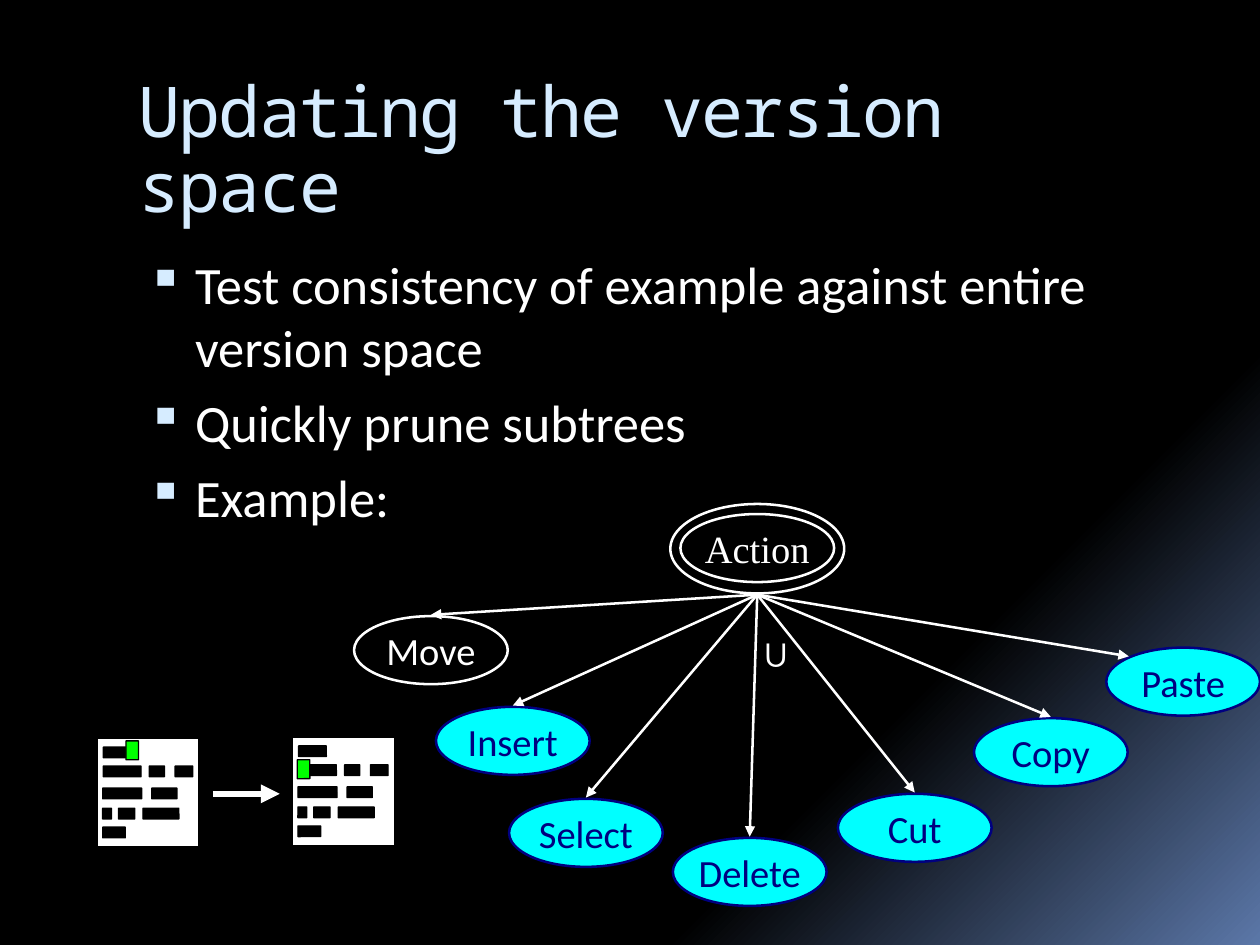
from dataclasses import dataclass
from math import cos, radians, sin

from lxml.etree import SubElement
from pptx import Presentation
from pptx.dml.color import RGBColor as Rgb
from pptx.enum.shapes import MSO_CONNECTOR as Link, MSO_SHAPE as Kind
from pptx.enum.text import MSO_ANCHOR as Anchor, PP_ALIGN as Align
from pptx.oxml.ns import qn
from pptx.util import Inches, Pt

COLUMNS, ROWS = 100, 75
WIDTH, HEIGHT = Inches(10), Inches(7.5)


@dataclass(frozen=True)
class Theme:
    black: str = "000000"
    white: str = "FFFFFF"
    glow: str = "5B77A8"
    ice: str = "D6ECFF"
    cyan: str = "00FFFF"
    navy: str = "000080"
    green: str = "00FF00"
    title_font: str = "Noto Sans Mono"
    body_font: str = "Calibri"
    root_font: str = "Times New Roman"
    symbol_font: str = "Arial"
    title_size: float = 40
    body_size: float = 30
    node_size: float = 22
    thin: float = 0.75
    outline: float = 1.45
    heavy: float = 3.6


THEME = Theme()

NODE_SIZE = (12.2, 5.4)
ROOT = (54, 40.8)
RING = (53.2, 40, 13.8, 7.1)
PRUNED = [
    ("Insert", 34.6, 56.1, 90),
    ("Select", 40.4, 63.4, 90),
    ("Delete", 53.4, 66.5, 90),
    ("Cut", 66.5, 63, 90),
    ("Copy", 77.3, 57, 90),
    ("Paste", 87.8, 51.4, 135),
]
KEPT = ("Move", 28.1, 48.9, 90)

PAGE_SIZE = (8.5, 9)
CURSOR_SIZE = (1, 1.5)
WORD_HEIGHT = 0.85
WORD_ROWS = [
    (0.9, [(0.7, 2.2)]),
    (2.4, [(0.7, 3), (4.35, 1.2), (6.4, 1.4)]),
    (4.15, [(0.65, 3.1), (4.55, 2)]),
    (5.75, [(0.65, 0.7), (1.9, 1.3), (3.85, 2.85)]),
    (7.25, [(0.65, 1.8)]),
]


def across(columns):
    return round(WIDTH * columns / COLUMNS)


def down(rows):
    return round(HEIGHT * rows / ROWS)


def area(left, top, width, height):
    return across(left), down(top), across(width), down(height)


def write(frame, text, *, font, size, color, align=Align.LEFT,
          anchor=Anchor.TOP, wrap=True, inset=None, bullet=None,
          before=0, leading=1.0, tracking=0):
    frame.word_wrap = wrap
    frame.vertical_anchor = anchor
    if inset is not None:
        frame.margin_left = frame.margin_right = inset
        frame.margin_top = frame.margin_bottom = inset
    for index, line in enumerate(text.split("\n")):
        paragraph = frame.add_paragraph() if index else frame.paragraphs[0]
        paragraph.alignment = align
        paragraph.space_before = Pt(before)
        paragraph.line_spacing = leading
        run = paragraph.add_run()
        run.text = line
        run.font.name = font
        run.font.size = Pt(size)
        run.font.color.rgb = Rgb.from_string(color)
        if tracking:
            run.font._element.set("spc", str(tracking * 100))
        if bullet:
            add_bullet(paragraph, bullet)


def add_bullet(paragraph, mark):
    props = paragraph._p.get_or_add_pPr()
    props.set("marL", str(Inches(0.45)))
    props.set("indent", str(Inches(-0.38)))
    tint = SubElement(props, qn("a:buClr"))
    SubElement(tint, qn("a:srgbClr"), val=THEME.ice)
    SubElement(props, qn("a:buSzPct"), val="95000")
    SubElement(props, qn("a:buChar"), char=mark)


def add_text(slide, box, text, **style):
    holder = slide.shapes.add_textbox(*area(*box))
    write(holder.text_frame, text, **style)


def add_figure(shapes, kind, box, fill, line, weight):
    figure = shapes.add_shape(kind, *area(*box))
    figure.shadow.inherit = False
    if fill:
        figure.fill.solid()
        figure.fill.fore_color.rgb = Rgb.from_string(fill)
    else:
        figure.fill.background()
    figure.line.color.rgb = Rgb.from_string(line)
    figure.line.width = Pt(weight)
    return figure


def add_block(shapes, box, fill, weight=THEME.thin):
    block = add_figure(shapes, Kind.ROUNDED_RECTANGLE, box, fill,
                       THEME.black, weight)
    block.adjustments[0] = 0.02 if weight == THEME.thin else 0


def add_arrow(shapes, start, end, weight):
    arrow = shapes.add_connector(Link.STRAIGHT, across(start[0]), down(start[1]),
                                 across(end[0]), down(end[1]))
    arrow.line.color.rgb = Rgb.from_string(THEME.white)
    arrow.line.width = Pt(weight)
    SubElement(arrow.line._get_or_add_ln(), qn("a:tailEnd"), type="triangle")
    SubElement(arrow._element.spPr, qn("a:effectLst"))


def add_node(slide, label, corner, fill, ink, font=THEME.body_font):
    node = add_figure(slide.shapes, Kind.OVAL, (*corner, *NODE_SIZE), fill, ink,
                      THEME.outline)
    write(node.text_frame, label, font=font, size=THEME.node_size, color=ink,
          align=Align.CENTER, anchor=Anchor.MIDDLE, wrap=False, inset=0)


def add_document(shapes, left, top, cursor):
    add_block(shapes, (left, top, *PAGE_SIZE), THEME.white, THEME.heavy)
    for row, words in WORD_ROWS:
        for column, width in words:
            add_block(shapes, (left + column, top + row, width, WORD_HEIGHT),
                      THEME.black)
    add_block(shapes, (left + cursor[0], top + cursor[1], *CURSOR_SIZE),
              THEME.green)


def add_edit_example(slide):
    example = slide.shapes.add_group_shape().shapes
    add_document(example, 7.5, 58.4, (2.5, 0.4))
    add_document(example, 23, 58.3, (0.6, 2))
    add_arrow(example, (16.9, 63), (22.2, 63), THEME.heavy)


def rim_point(left, top, degrees):
    width, height = NODE_SIZE
    return (left + width / 2 * (1 + cos(radians(degrees))),
            top + height / 2 * (1 - sin(radians(degrees))))


def add_action_tree(slide):
    add_node(slide, KEPT[0], KEPT[1:3], None, THEME.white)
    for label, left, top, _ in PRUNED:
        add_node(slide, label, (left, top), THEME.cyan, THEME.navy)
    add_node(slide, "Action", ROOT, None, THEME.white, THEME.root_font)
    add_figure(slide.shapes, Kind.OVAL, RING, None, THEME.white, THEME.outline)
    hub = RING[0] + RING[2] / 2, RING[1] + RING[3] + 0.1
    for _, left, top, degrees in [KEPT, *PRUNED]:
        add_arrow(slide.shapes, hub, rim_point(left, top - 0.1, degrees),
                  THEME.outline)
    add_text(slide, (60.5, 49.9, 2.3, 3.7), "∪", font=THEME.symbol_font,
             size=THEME.node_size, color=THEME.white, wrap=False, inset=0)


def paint_background(slide):
    fill = slide.background.fill
    fill.gradient()
    fill.gradient_angle = 315
    for stop, position, color in zip(fill.gradient_stops, (0.73, 1),
                                     (THEME.black, THEME.glow)):
        stop.position = position
        stop.color.rgb = Rgb.from_string(color)


def main():
    deck = Presentation()
    deck.slide_width, deck.slide_height = WIDTH, HEIGHT
    slide = deck.slides.add_slide(deck.slide_layouts[6])
    paint_background(slide)
    add_text(slide, (10, 5.6, 85, 10), "Updating the version space",
             font=THEME.title_font, size=THEME.title_size, color=THEME.ice,
             leading=0.9, tracking=-1)
    add_text(slide, (10, 19.5, 85, 50),
             "Test consistency of example against entire version space\n"
             "Quickly prune subtrees\nExample:",
             font=THEME.body_font, size=THEME.body_size, color=THEME.white,
             bullet="▪", before=7)
    add_edit_example(slide)
    add_action_tree(slide)
    deck.save("out.pptx")


if __name__ == "__main__":
    main()
